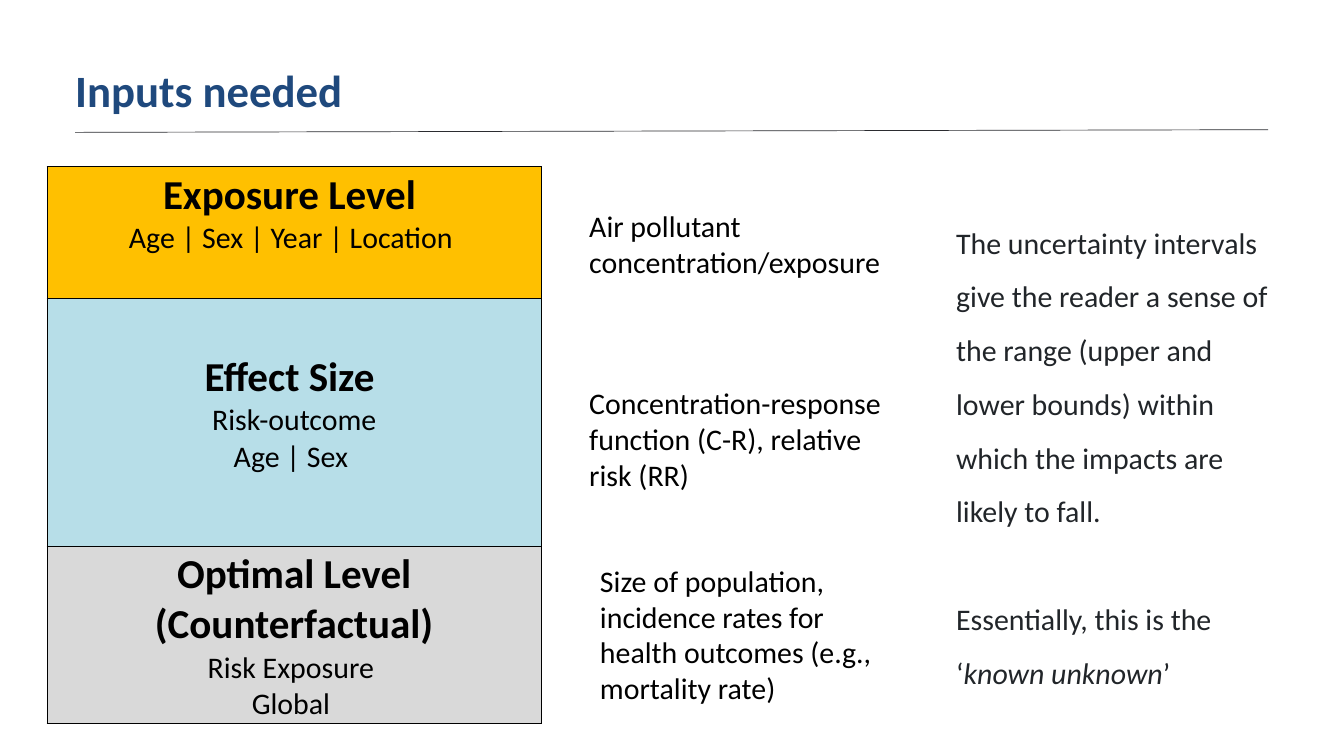
from lxml import etree
from pptx import Presentation
from pptx import util as u
from pptx.dml.color import RGBColor
from pptx.enum import shapes, text
from pptx.oxml import ns

NAVY = RGBColor(0x1F, 0x49, 0x7D)
BLACK = RGBColor(0, 0, 0)
SLATE = RGBColor(0x21, 0x25, 0x29)
RULE = RGBColor(0x2B, 0x2C, 0x30)
GOLD = RGBColor(0xFF, 0xC0, 0x00)
SKY = RGBColor(0xB7, 0xDE, 0xE8)
GREY = RGBColor(0xD9, 0xD9, 0xD9)

COLS, ROWS = 20, 11.25


class Deck:
    font = "Calibri"
    title = 48
    head = 44
    body = 32

    def __init__(self):
        self.prs = Presentation()
        self.prs.slide_width = u.Inches(20)
        self.prs.slide_height = u.Inches(11.25)
        self.slide = self.prs.slides.add_slide(self.prs.slide_layouts[6])

    def grid(self, *spots):
        units = (self.prs.slide_width / COLS, self.prs.slide_height / ROWS)
        return [round(spot * units[i % 2]) for i, spot in enumerate(spots)]

    def style(self, para, size, color, bold=False):
        font = para.font
        font.name, font.size, font.bold = self.font, u.Pt(size), bold
        font.color.rgb = color

    def label(self, spot, paras, size=body, color=BLACK, bold=False,
              inset=True, lead=None, gap=0):
        box = self.slide.shapes.add_textbox(*self.grid(*spot))
        frame = box.text_frame
        frame.word_wrap = True
        frame.auto_size = text.MSO_AUTO_SIZE.SHAPE_TO_FIT_TEXT
        if not inset:
            frame.margin_left = frame.margin_right = 0
            frame.margin_top = frame.margin_bottom = 0
        for i, runs in enumerate(paras):
            para = frame.add_paragraph() if i else frame.paragraphs[0]
            self.style(para, size, color, bold)
            if lead:
                para.line_spacing = lead
            if i:
                para.space_before = u.Pt(gap)
            for words, slant in runs:
                run = para.add_run()
                run.text = words
                if slant:
                    run.font.italic = True

    def line(self, spot):
        link = self.slide.shapes.add_connector(
            shapes.MSO_CONNECTOR.STRAIGHT, *self.grid(*spot))
        link.line.color.rgb = RULE
        link.line.width = u.Pt(0.75)
        etree.SubElement(link._element.spPr, ns.qn("a:effectLst"))

    def border(self, cell):
        props = cell._tc.get_or_add_tcPr()
        for i, side in enumerate(("lnL", "lnR", "lnT", "lnB")):
            edge = etree.Element(ns.qn(f"a:{side}"), w=str(u.Pt(1)))
            fill = etree.SubElement(edge, ns.qn("a:solidFill"))
            etree.SubElement(fill, ns.qn("a:srgbClr"), val=str(BLACK))
            props.insert(i, edge)

    def table(self, spot, items):
        high = sum(item[0] for item in items)
        frame = self.slide.shapes.add_table(
            len(items), 1, *self.grid(*spot, high))
        table = frame.table
        table.first_row = table.horz_banding = False
        for row, (tall, fill, top, lines) in zip(table.rows, items):
            row.height = self.grid(0, tall)[1]
            cell = row.cells[0]
            cell.fill.solid()
            cell.fill.fore_color.rgb = fill
            cell.margin_top = self.grid(0, top)[1]
            self.border(cell)
            for i, words in enumerate(lines):
                frame = cell.text_frame
                para = frame.add_paragraph() if i else frame.paragraphs[0]
                para.text = words
                para.alignment = text.PP_ALIGN.CENTER
                self.style(para, self.body if i else self.head, BLACK, not i)

    def save(self):
        self.prs.save("out.pptx")


def main():
    deck = Deck()
    deck.line((1.12, 1.97, 18.87, 1.93))
    deck.label((1.12, 0.93, 18.43, 0.81), [[("Inputs needed", False)]],
               deck.title, NAVY, bold=True, inset=False)
    deck.table((0.7, 2.48, 7.36), [
        (1.96, GOLD, 0.05, ["Exposure Level ", "Age | Sex | Year | Location "]),
        (3.69, SKY, 0.8, ["Effect Size ", "Risk-outcome", "Age | Sex "]),
        (2.64, GREY, 0.05, ["Optimal Level (Counterfactual)",
                            "Risk Exposure ", "Global "]),
    ])
    notes = [
        ((8.67, 3.04, 4.68, 1.18), "Air pollutant concentration/exposure"),
        ((8.67, 5.68, 4.68, 1.72),
         "Concentration-response function (C-R), relative risk (RR)"),
        ((8.83, 8.32, 4.52, 2.26),
         "Size of population, incidence rates for health outcomes "
         "(e.g., mortality rate)"),
    ]
    for spot, words in notes:
        deck.label(spot, [[(words, False)]])
    deck.label((14.13, 3.02, 5.12, 7.21), [
        [("The uncertainty intervals give the reader a sense of the range "
          "(upper and lower bounds) within which the impacts are likely "
          "to fall.", False)],
        [("Essentially, this is the ‘", False), ("known unknown", True),
         ("’", False)],
    ], color=SLATE, lead=1.5, gap=58)
    deck.save()


if __name__ == "__main__":
    main()
